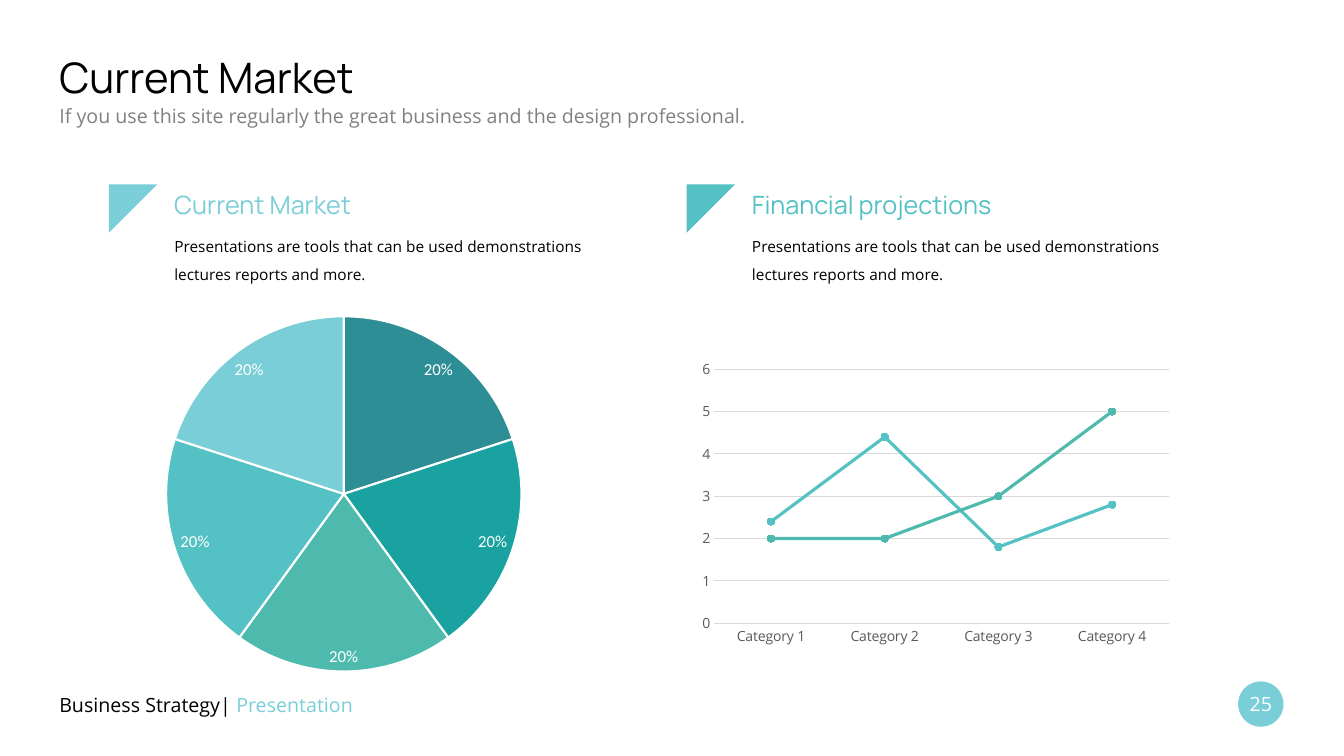
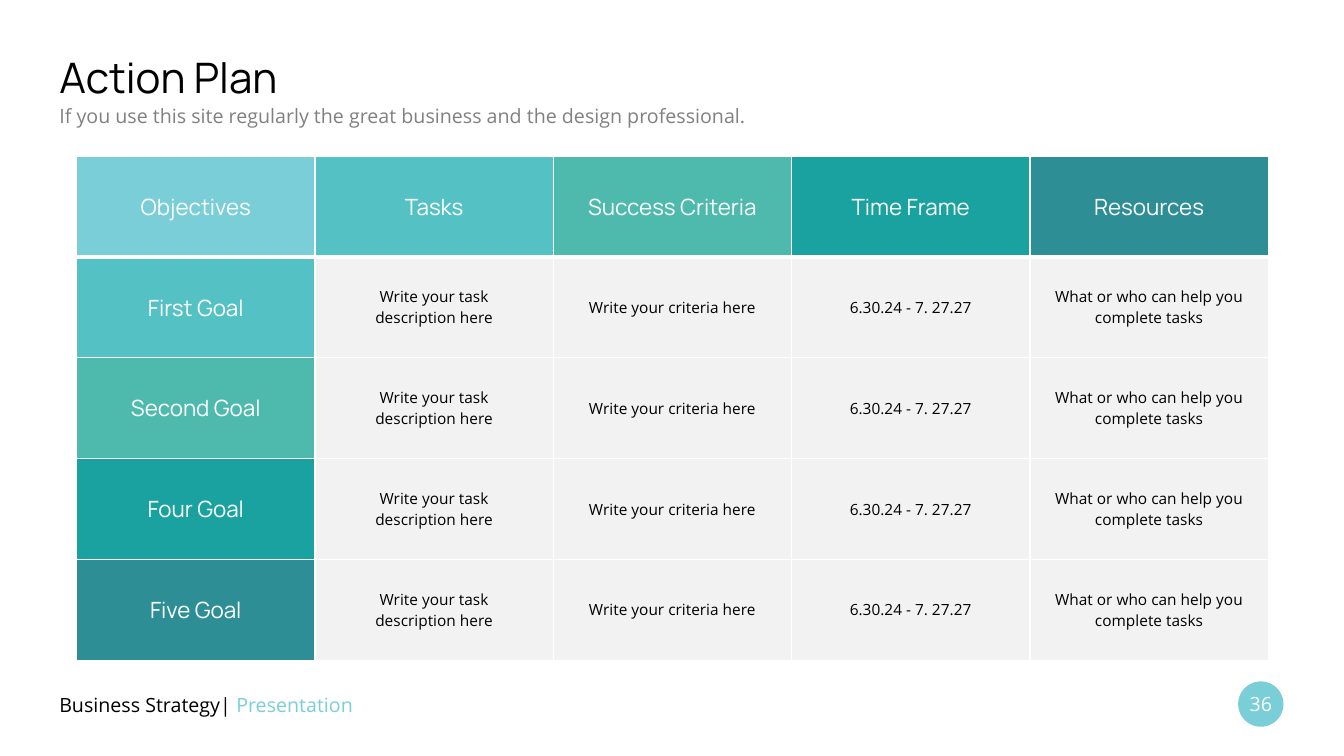
from lxml import etree
from pptx import Presentation
from pptx.chart.data import CategoryChartData
from pptx.dml.color import RGBColor
from pptx.enum.chart import XL_CHART_TYPE, XL_LABEL_POSITION, XL_MARKER_STYLE, XL_TICK_MARK
from pptx.enum.shapes import MSO_SHAPE
from pptx.enum.text import MSO_ANCHOR, PP_ALIGN
from pptx.oxml.ns import qn
from pptx.util import Inches, Pt

PIE = XL_CHART_TYPE.PIE
LINE_MARKERS = XL_CHART_TYPE.LINE_MARKERS
BEST_FIT = XL_LABEL_POSITION.BEST_FIT
CIRCLE = XL_MARKER_STYLE.CIRCLE
NO_TICK = XL_TICK_MARK.NONE
OVAL = MSO_SHAPE.OVAL
RIGHT_TRIANGLE = MSO_SHAPE.RIGHT_TRIANGLE
TOP, MIDDLE = MSO_ANCHOR.TOP, MSO_ANCHOR.MIDDLE
LEFT, CENTER = PP_ALIGN.LEFT, PP_ALIGN.CENTER

BLACK = RGBColor(0x00, 0x00, 0x00)
WHITE = RGBColor(0xFF, 0xFF, 0xFF)
SUBTITLE_GRAY = RGBColor(0x80, 0x80, 0x80)
AXIS_GRAY = RGBColor(0x59, 0x59, 0x59)
GRID_GRAY = RGBColor(0xD9, 0xD9, 0xD9)
CELL_GRAY = RGBColor(0xF2, 0xF2, 0xF2)
SKY = RGBColor(0x7A, 0xCE, 0xD8)
AQUA = RGBColor(0x54, 0xC1, 0xC4)
MINT = RGBColor(0x4E, 0xBA, 0xAD)
TEAL = RGBColor(0x1A, 0xA2, 0xA0)
DEEP_TEAL = RGBColor(0x2D, 0x8E, 0x95)
PALETTE = (SKY, AQUA, MINT, TEAL, DEEP_TEAL)

HEADING_FONT = "Manrope"
BODY_FONT = "Open Sans"
CHART_FONT = "Calibri"

MARGIN = 0.49
SUBTITLE = "If you use this site regularly the great business and the design professional."
PANEL_TEXT = "Presentations are tools that can be used demonstrations lectures reports and more."

HEADERS = ("Objectives", "Tasks", "Success Criteria", "Time Frame", "Resources")
GOALS = ("First Goal", "Second Goal", "Four Goal", "Five Goal")
GOAL_DETAILS = (
    ("Write your task", "description here"),
    ("Write your criteria here",),
    ("6.30.24 - 7. 27.27",),
    ("What or who can help you complete tasks",),
)


def style_font(font, size, name, color):
    font.size = Pt(size)
    font.name = name
    font.color.rgb = color


def add_run(paragraph, text, size, name, color):
    run = paragraph.add_run()
    run.text = text
    style_font(run.font, size, name, color)


def add_text(slide, box, runs, anchor=TOP, line_spacing=None):
    frame = slide.shapes.add_textbox(*map(Inches, box)).text_frame
    frame.word_wrap = True
    frame.vertical_anchor = anchor
    paragraph = frame.paragraphs[0]
    paragraph.alignment = LEFT
    if line_spacing:
        paragraph.line_spacing = Pt(line_spacing)
    for run in runs:
        add_run(paragraph, *run)


def add_filled_shape(slide, kind, box, color):
    shape = slide.shapes.add_shape(kind, *map(Inches, box))
    shape.shadow.inherit = False
    shape.fill.solid()
    shape.fill.fore_color.rgb = color
    shape.line.fill.background()
    return shape


def add_page_number(slide, box, number):
    frame = add_filled_shape(slide, OVAL, box, SKY).text_frame
    frame.word_wrap = False
    frame.vertical_anchor = MIDDLE
    frame.margin_left = frame.margin_right = frame.margin_top = frame.margin_bottom = 0
    paragraph = frame.paragraphs[0]
    paragraph.alignment = CENTER
    add_run(paragraph, str(number), 14, BODY_FONT, WHITE)


def add_base_slide(presentation, title, number):
    slide = presentation.slides.add_slide(presentation.slide_layouts[6])
    add_text(slide, (MARGIN, 0.43, 12.35, 0.66),
             [(title, 30, HEADING_FONT, BLACK)], MIDDLE)
    add_text(slide, (MARGIN, 0.98, 12.35, 0.34),
             [(SUBTITLE, 14, BODY_FONT, SUBTITLE_GRAY)])
    add_text(slide, (MARGIN, 6.79, 3.5, 0.4),
             [("Business Strategy| ", 14, BODY_FONT, BLACK),
              ("Presentation", 14, BODY_FONT, SKY)], MIDDLE)
    add_page_number(slide, (12.28, 6.76, 0.45, 0.45), number)
    return slide


def add_panel_heading(slide, left, top, heading, color):
    triangle = add_filled_shape(slide, RIGHT_TRIANGLE, (left, top, 0.48, 0.48), color)
    triangle.rotation = 90
    text_left = left + 0.55
    add_text(slide, (text_left, top, 4.4, 0.4), [(heading, 18, HEADING_FONT, color)])
    add_text(slide, (text_left, top + 0.38, 4.28, 0.64),
             [(PANEL_TEXT, 11, BODY_FONT, BLACK)], line_spacing=20)


def add_plain_chart(slide, kind, box, categories, series):
    data = CategoryChartData()
    data.categories = categories
    for name, values in series:
        data.add_series(name, values)
    chart = slide.shapes.add_chart(kind, *map(Inches, box), data).chart
    chart.has_title = False
    chart.has_legend = False
    style_font(chart.font, 10, CHART_FONT, BLACK)
    return chart


def add_market_pie(slide, box):
    chart = add_plain_chart(slide, PIE, box, ("1", "2", "3", "4", "5"),
                            [("Series 1", [0.2] * 5)])
    plot = chart.plots[0]
    plot.vary_by_categories = True
    for index, color in enumerate(reversed(PALETTE)):
        point = plot.series[0].points[index].format
        point.fill.solid()
        point.fill.fore_color.rgb = color
        point.line.color.rgb = WHITE
        point.line.width = Pt(1.5)
    plot.has_data_labels = True
    labels = plot.data_labels
    labels.show_value = True
    labels.show_percentage = False
    labels.number_format = "0%"
    labels.number_format_is_linked = False
    labels.position = BEST_FIT
    style_font(labels.font, 12, CHART_FONT, WHITE)


def style_axis(axis):
    axis.major_tick_mark = axis.minor_tick_mark = NO_TICK
    style_font(axis.tick_labels.font, 10, BODY_FONT, AXIS_GRAY)


def style_gray_line(line):
    line.color.rgb = GRID_GRAY
    line.width = Pt(0.75)


def add_projection_lines(slide, box):
    chart = add_plain_chart(
        slide, LINE_MARKERS, box, [f"Category {index}" for index in range(1, 5)],
        [("Series 1", (2.4, 4.4, 1.8, 2.8)), ("Series 2", (2, 2, 3, 5))])
    plot = chart.plots[0]
    plot.vary_by_categories = False
    for series, color, marker_color in zip(plot.series, (AQUA, MINT), (SKY, MINT)):
        series.smooth = False
        series.format.line.color.rgb = color
        series.format.line.width = Pt(2.25)
        marker = series.marker
        marker.style = CIRCLE
        marker.size = 5
        marker.format.fill.solid()
        marker.format.fill.fore_color.rgb = marker_color
        marker.format.line.color.rgb = color
    category_axis, value_axis = chart.category_axis, chart.value_axis
    style_axis(category_axis)
    style_gray_line(category_axis.format.line)
    style_axis(value_axis)
    value_axis.minimum_scale = 0
    value_axis.maximum_scale = 6
    value_axis.major_unit = 1
    value_axis.format.line.fill.background()
    value_axis.has_major_gridlines = True
    style_gray_line(value_axis.major_gridlines.format.line)


def add_cell_borders(cell, widths):
    properties = cell._tc.get_or_add_tcPr()
    for side, width in widths.items():
        line = etree.SubElement(properties, qn(f"a:ln{side}"), w=str(Pt(width)))
        fill = etree.SubElement(line, qn("a:solidFill"))
        etree.SubElement(fill, qn("a:srgbClr"), val=str(WHITE))


def fill_cell(cell, lines, fill_color, text_style, border_widths):
    add_cell_borders(cell, border_widths)
    cell.fill.solid()
    cell.fill.fore_color.rgb = fill_color
    cell.vertical_anchor = MIDDLE
    frame = cell.text_frame
    for index, text in enumerate(lines):
        paragraph = frame.add_paragraph() if index else frame.paragraphs[0]
        paragraph.alignment = CENTER
        add_run(paragraph, text, *text_style)


def add_plan_table(slide, box):
    rows = [[(header,) for header in HEADERS]]
    rows += [[(goal,), *GOAL_DETAILS] for goal in GOALS]
    table = slide.shapes.add_table(len(rows), len(HEADERS), *map(Inches, box)).table
    table.first_row = False
    table.horz_banding = False
    for row_index, row in enumerate(rows):
        borders = {"L": 1, "R": 1,
                   "T": 3 if row_index == 1 else 1,
                   "B": 3 if row_index == 0 else 1}
        for column_index, lines in enumerate(row):
            if row_index == 0 or column_index == 0:
                color = PALETTE[row_index + column_index]
                text_style = (16, HEADING_FONT, WHITE)
            else:
                color = CELL_GRAY
                text_style = (11, BODY_FONT, BLACK)
            fill_cell(table.cell(row_index, column_index), lines, color, text_style, borders)


def build_market_slide(presentation):
    slide = add_base_slide(presentation, "Current Market", 25)
    add_market_pie(slide, (1.27, 3, 4.28, 3.8))
    add_projection_lines(slide, (6.87, 3.51, 4.82, 2.96))
    add_panel_heading(slide, 1.08, 1.83, "Current Market", SKY)
    add_panel_heading(slide, 6.81, 1.83, "Financial projections", AQUA)


def build_plan_slide(presentation):
    slide = add_base_slide(presentation, "Action Plan", 36)
    add_plan_table(slide, (0.76, 1.55, 11.82, 5))


def main():
    presentation = Presentation()
    presentation.slide_width = Inches(13.33)
    presentation.slide_height = Inches(7.5)
    build_market_slide(presentation)
    build_plan_slide(presentation)
    presentation.save("out.pptx")


if __name__ == "__main__":
    main()
